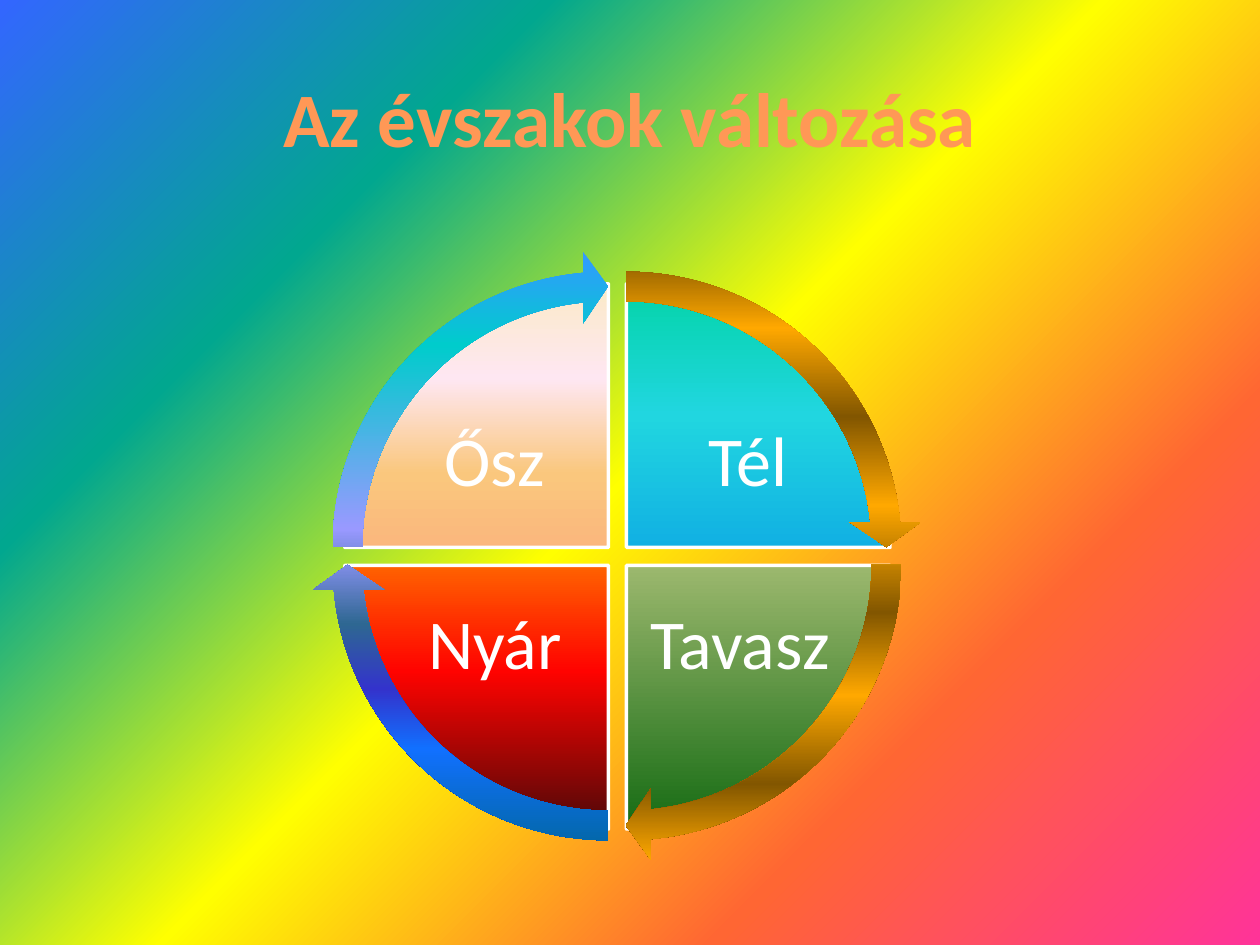
from lxml import etree
from pptx import Presentation
from pptx.dml.color import RGBColor
from pptx.enum.shapes import MSO_SHAPE
from pptx.enum.text import MSO_ANCHOR, PP_ALIGN
from pptx.oxml.ns import qn
from pptx.util import Pt

PIE, ARROW = MSO_SHAPE.PIE, MSO_SHAPE.CIRCULAR_ARROW
MIDDLE, CENTER = MSO_ANCHOR.MIDDLE, PP_ALIGN.CENTER
EMU_PER_PX = 914400 / 126
SLIDE_W, SLIDE_H = 1260, 945
QUARTER, FULL_TURN = 54, 216
PIE_SIZE, ARROW_SIZE, GAP = 527, 592, 18
PIE_INSET = (ARROW_SIZE - PIE_SIZE) // 2 + 1

COLORS = {"white": "FFFFFF"}
GRADIENTS = {
    "background": {0: "FF3399", 25: "FF6633", 50: "FFFF00", 75: "01A78F", 100: "3366FF"},
    "title": {0: "9D4700", 78: "FF9856", 100: "FFF5F1"},
    "winter": {0: "03D4A8", 25: "21D6E0", 75: "0087E6", 100: "005CBF"},
    "spring": {0: "DDEBCF", 50: "9CB86E", 100: "156B13"},
    "summer": {0: "FFF200", 45: "FF7A00", 70: "FF0300", 100: "4D0808"},
    "autumn": {0: "FBEAC7", 18: "FEE7F2", 36: "FAC77D", 61: "FBA97D", 82: "FBD49C", 100: "FEE7F2"},
    "gold": {0: "825600", 13: "FFA800", 28: "825600", 43: "FFA800",
             58: "825600", 72: "FFA800", 87: "825600", 100: "FFA800"},
    "blue": {0: "3399FF", 16: "00CCCC", 47: "9999FF", 60: "2E6792",
             71: "3333CC", 81: "1170FF", 100: "006699"},
}
SEASONS = [
    (" Tél", "winter", "gold", 1, 0, 162),
    ("Tavasz", "spring", "gold", 1, 1, 0),
    ("Nyár", "summer", "blue", 0, 1, 54),
    ("Ősz", "autumn", "blue", 0, 0, 108),
]


def px(*lengths):
    """Turn pixel lengths into EMU."""
    return [round(length * EMU_PER_PX) for length in lengths]


def set_all(target, values):
    """Set attributes of an object from a dict."""
    for name, value in values.items():
        setattr(target, name, value)


def paint_gradient(fill, element, gradient, angle=270):
    """Give a fill the named gradient, its angle counted anticlockwise."""
    fill.gradient()
    fill.gradient_angle = angle
    stops = next(element.iter(qn("a:gsLst")))
    for stop in list(stops):
        stops.remove(stop)
    for position, color in GRADIENTS[gradient].items():
        stop = etree.SubElement(stops, qn("a:gs"), pos=str(position * 1000))
        etree.SubElement(stop, qn("a:srgbClr"), val=color)


def add_title(slide, box):
    """Place the slide title in its placeholder."""
    title = slide.shapes.title
    set_all(title, dict(zip(("left", "top", "width", "height"), px(*box))))
    title.text_frame.vertical_anchor = MIDDLE
    paragraph = title.text_frame.paragraphs[0]
    paragraph.alignment = CENTER
    run = paragraph.add_run()
    run.text = "Az évszakok változása"
    set_all(run.font, {"size": Pt(44), "name": "Calibri", "bold": True})
    paint_gradient(run.font.fill, run._r, "title")


def add_round(wheel, kind, box, gradient, adjustments):
    """Add a gradient-filled shape with its adjustments."""
    part = wheel.shapes.add_shape(kind, *px(*box))
    part.shadow.inherit = False
    for index, value in enumerate(adjustments):
        part.adjustments[index] = value
    paint_gradient(part.fill, part._element, gradient)
    return part


def add_label(wheel, box, season):
    """Write the name of a season on its quarter."""
    label = wheel.shapes.add_textbox(*px(*box))
    inset = px(7)[0]
    set_all(label.text_frame, {
        "word_wrap": True, "vertical_anchor": MIDDLE,
        "margin_left": inset, "margin_right": inset,
        "margin_top": inset, "margin_bottom": inset,
    })
    paragraph = label.text_frame.paragraphs[0]
    set_all(paragraph, {"alignment": CENTER, "line_spacing": 0.9})
    run = paragraph.add_run()
    run.text = season
    set_all(run.font, {"size": Pt(40), "name": "Calibri"})
    run.font.color.rgb = RGBColor.from_string(COLORS["white"])


def add_season_wheel(slide, left, top):
    """Draw the four season quarters and the arrows around them."""
    wheel = slide.shapes.add_group_shape()
    for season, gradient, _, column, row, start in SEASONS:
        quarter_box = (left + PIE_INSET + column * GAP, top + PIE_INSET + row * GAP,
                       PIE_SIZE, PIE_SIZE)
        end = (start + QUARTER) % FULL_TURN
        quarter = add_round(wheel, PIE, quarter_box, gradient, (start, end))
        quarter.line.color.rgb = RGBColor.from_string(COLORS["white"])
        quarter.line.width = Pt(2)
        label_box = (left + 86 + column * 245, top + 141 + row * 183, 194, 144)
        add_label(wheel, label_box, season)
    for _, _, gradient, column, row, start in SEASONS:
        arrow_box = (left + column * GAP, top + row * GAP, ARROW_SIZE, ARROW_SIZE)
        arrow = add_round(wheel, ARROW, arrow_box, gradient,
                          (0.05, 3.28, start + 50.73, start, 0.06))
        arrow.line.fill.background()


def main():
    """Build and save the slide."""
    deck = Presentation()
    deck.slide_width, deck.slide_height = px(SLIDE_W, SLIDE_H)
    slide = deck.slides.add_slide(deck.slide_layouts[5])
    paint_gradient(slide.background.fill, slide._element, "background", 135)
    add_title(slide, (63, 38, 1134, 158))
    add_season_wheel(slide, 312, 251)
    deck.save("out.pptx")


if __name__ == "__main__":
    main()
